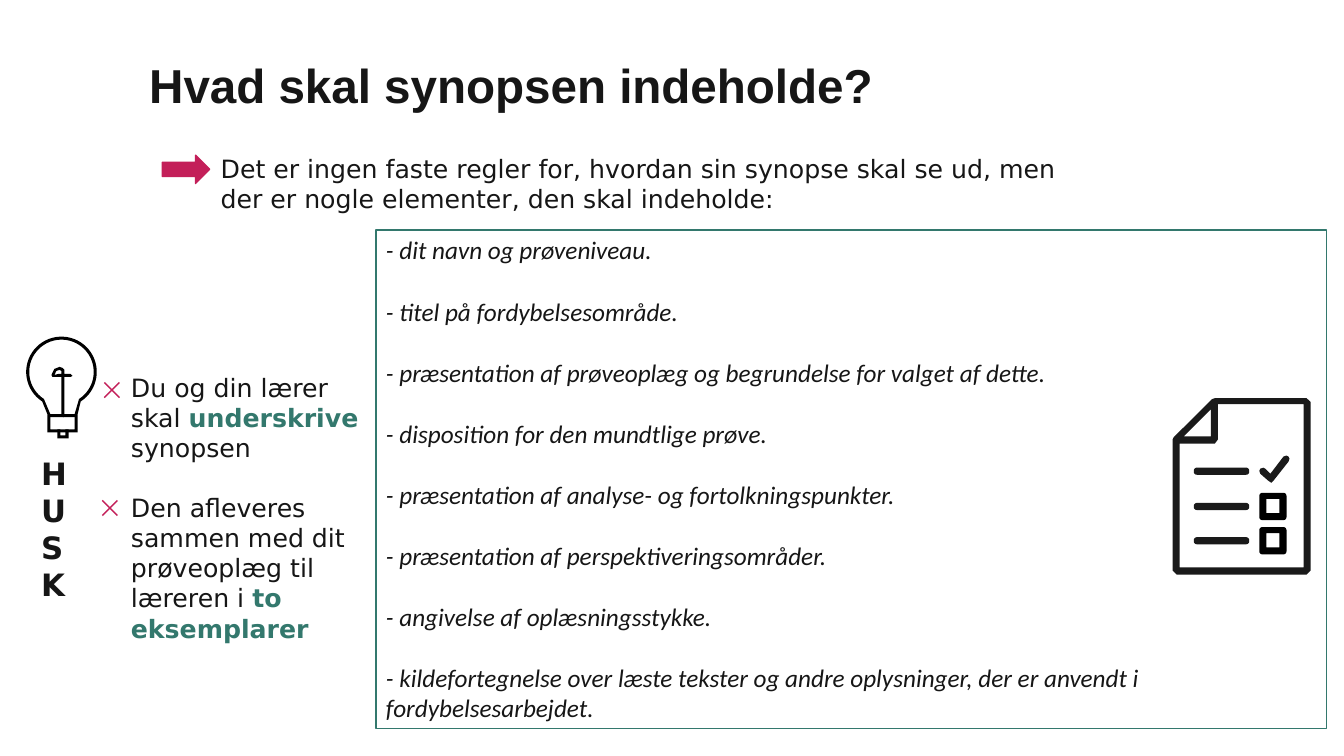
from dataclasses import dataclass
from math import cos, radians, sin

from pptx import Presentation
from pptx.dml.color import RGBColor
from pptx.enum.shapes import MSO_SHAPE
from pptx.enum.text import MSO_ANCHOR, PP_ALIGN
from pptx.util import Inches, Pt

COLORS = {"ink": "161616", "green": "33786D", "pink": "C31F59",
          "page": "1A1A1A", "black": "000000"}
BODY_FONT = "DejaVu Sans"

Point = tuple[float, float]
Outline = list[Point]


@dataclass
class Run:
    text: str
    color: str = "ink"
    bold: bool = False


@dataclass
class Part:
    """One filled piece of an icon; later outlines cut holes in the first."""
    outlines: list[Outline]
    color: str = "black"


def rgb(name: str) -> RGBColor:
    return RGBColor.from_string(COLORS[name])


def place(sp, left: float, top: float, width: float, height: float) -> None:
    sp.left, sp.top = Inches(left), Inches(top)
    sp.width, sp.height = Inches(width), Inches(height)


def write(sp, paragraphs: list[list[Run]], *, font: str = BODY_FONT, size: float = 18,
          italic: bool = False, gap: float = 0, line_spacing: float | None = None,
          wrap: bool = True) -> None:
    """Fill a shape with left-aligned paragraphs, gap points apart."""
    tf = sp.text_frame
    tf.word_wrap = wrap
    tf.vertical_anchor = MSO_ANCHOR.TOP
    for i, runs in enumerate(paragraphs):
        p = tf.paragraphs[0] if i == 0 else tf.add_paragraph()
        p.alignment = PP_ALIGN.LEFT
        p.space_before = Pt(gap if i else 0)
        if line_spacing:
            p.line_spacing = line_spacing
        for run in runs:
            r = p.add_run()
            r.text = run.text
            r.font.name, r.font.size = font, Pt(size)
            r.font.bold, r.font.italic = run.bold, italic
            r.font.color.rgb = rgb(run.color)


def add_part(shapes, part: Part):
    first, *holes = [[(Inches(x), Inches(y)) for x, y in o] for o in part.outlines]
    builder = shapes.build_freeform(*first[0])
    builder.add_line_segments(first[1:], close=True)
    for hole in holes:
        builder.move_to(*hole[0])
        builder.add_line_segments(hole[1:], close=True)
    sp = builder.convert_to_shape()
    sp.shadow.inherit = False
    sp.fill.solid()
    sp.fill.fore_color.rgb = rgb(part.color)
    sp.line.fill.background()
    return sp


def add_icon(shapes, parts: list[Part]) -> None:
    shapes.add_group_shape([add_part(shapes, part) for part in parts])


def arc(cx: float, cy: float, radius: float, start: int, end: int, step: int) -> Outline:
    return [(cx + radius * cos(radians(a)), cy + radius * sin(radians(a)))
            for a in range(start, end + step, step)]


def rounded(left: float, top: float, width: float, height: float, radius: float) -> Outline:
    x1, x2 = left + radius, left + width - radius
    y1, y2 = top + radius, top + height - radius
    corners = [(x2, y2), (x1, y2), (x1, y1), (x2, y1)]
    return [pt for i, (x, y) in enumerate(corners)
            for pt in arc(x, y, radius, 90 * i, 90 * i + 90, 15)]


def bulb_outline(radius: float, neck: float, bottom: float) -> Outline:
    """Round glass narrowing to a neck of the given half width."""
    glass = arc(0.61, 3.69, radius, 123, 417, 6)
    right, left = 0.62 + neck, 0.62 - neck
    return glass + [(right, 4.11), (right, bottom), (left, bottom), (left, 4.11)]


def cross_outline(left: float, top: float, width: float, height: float) -> Outline:
    cx, cy, d = left + width / 2, top + height / 2, 0.01
    right, bottom = left + width, top + height
    return [(cx, cy - d), (right - d, top), (right, top + d), (cx + d, cy),
            (right, bottom - d), (right - d, bottom), (cx, cy + d), (left + d, bottom),
            (left, bottom - d), (cx - d, cy), (left, top + d), (left + d, top)]


def checklist_parts() -> list[Part]:
    page = [(11.67, 5.7), (12.96, 5.7), (13, 5.66), (13, 3.99), (12.96, 3.95),
            (12.05, 3.95), (12.02, 3.96), (11.64, 4.34), (11.63, 4.36), (11.63, 5.66)]
    fold = [(12.01, 4.06), (12.01, 4.33), (11.74, 4.33)]
    inside = [(11.7, 4.4), (12.05, 4.4), (12.08, 4.36), (12.08, 4.01),
              (12.93, 4.01), (12.93, 5.63), (11.7, 5.63)]
    tick = [(12.58, 4.77), (12.61, 4.79), (12.63, 4.77), (12.78, 4.58), (12.79, 4.55),
            (12.78, 4.53), (12.76, 4.52), (12.73, 4.53), (12.6, 4.7), (12.55, 4.65),
            (12.53, 4.64), (12.5, 4.65), (12.49, 4.67), (12.5, 4.7)]
    bars = [Part([rounded(11.84, top, 0.55, 0.07, 0.03)], "page")
            for top in (4.64, 4.99, 5.33)]
    boxes = [Part([rounded(12.49, top, 0.27, 0.27, 0.03),
                   rounded(12.56, top + 0.06, 0.13, 0.14, 0)])
             for top in (4.89, 5.23)]
    return [Part([page, fold, inside], "page"), Part([tick], "page"), *bars, *boxes]


def bulb_parts() -> list[Part]:
    filament = [(0.61, 4.13), (0.63, 4.14), (0.64, 4.12), (0.64, 3.74), (0.7, 3.74),
                (0.72, 3.73), (0.7, 3.71), (0.64, 3.71), (0.64, 3.67), (0.62, 3.65),
                (0.59, 3.64), (0.54, 3.66), (0.51, 3.72), (0.52, 3.74), (0.61, 3.74)]
    loop = [(0.54, 3.72), (0.56, 3.68), (0.59, 3.67), (0.61, 3.68), (0.61, 3.71),
            (0.58, 3.71)]
    foot = [(0.57, 4.26), (0.6, 4.26), (0.6, 4.32), (0.65, 4.32), (0.65, 4.26),
            (0.68, 4.26), (0.68, 4.35), (0.57, 4.35)]
    return [Part([bulb_outline(0.35, 0.15, 4.29), bulb_outline(0.32, 0.12, 4.26)]),
            Part([rounded(0.49, 4.11, 0.27, 0.03, 0.01)]),
            Part([filament, loop]), Part([foot])]


def add_text(shapes, box: tuple[float, float, float, float],
             paragraphs: list[list[Run]], **kwargs):
    sp = shapes.add_textbox(*map(Inches, box))
    write(sp, paragraphs, **kwargs)
    return sp


REQUIREMENTS = [
    "- dit navn og prøveniveau.",
    "- titel på fordybelsesområde.",
    "- præsentation af prøveoplæg og begrundelse for valget af dette.",
    "- disposition for den mundtlige prøve.",
    "- præsentation af analyse- og fortolkningspunkter.",
    "- præsentation af perspektiveringsområder.",
    "- angivelse af oplæsningsstykke.",
    "- kildefortegnelse over læste tekster og andre oplysninger, der er anvendt i "
    "fordybelsesarbejdet.",
]
REMINDERS = [
    [Run("Du og din lærer skal "), Run("underskrive", "green", True), Run(" synopsen")],
    [Run("Den afleveres sammen med dit prøveoplæg til læreren i "),
     Run("to eksemplarer", "green", True)],
]


def main() -> None:
    prs = Presentation()
    prs.slide_width, prs.slide_height = Inches(13.33), Inches(7.5)
    slide = prs.slides.add_slide(prs.slide_layouts[5])
    shapes = slide.shapes

    title = shapes.title
    place(title, 1.48, 0.65, 10.54, 0.37)
    tf = title.text_frame
    tf.margin_left = tf.margin_top = tf.margin_right = tf.margin_bottom = 0
    write(title, [[Run("Hvad skal synopsen indeholde?", bold=True)]],
          font="Arial", size=34, line_spacing=0.83)

    add_text(shapes, (2.09, 1.47, 8.5, 0.71),
             [[Run("Det er ingen faste regler for, hvordan sin synopse skal se ud, men "
                   "der er nogle elementer, den skal indeholde:")]])

    frame = shapes.add_shape(MSO_SHAPE.RECTANGLE, *map(Inches, (3.73, 2.28, 9.43, 4.95)))
    frame.shadow.inherit = False
    frame.fill.background()
    frame.line.color.rgb, frame.line.width = rgb("green"), Pt(1)
    write(frame, [[Run(item)] for item in REQUIREMENTS], font="Calibri", italic=True, gap=22)
    add_icon(shapes, checklist_parts())

    arrow = shapes.add_shape(MSO_SHAPE.RIGHT_ARROW, *map(Inches, (1.61, 1.54, 0.47, 0.28)))
    arrow.shadow.inherit = False
    arrow.fill.solid()
    arrow.fill.fore_color.rgb = arrow.line.color.rgb = rgb("pink")
    arrow.line.width = Pt(1)

    husk = add_text(shapes, (0.31, 4.46, 0.64, 1.85), [[Run("HUSK", bold=True)]],
                    size=22, wrap=False)
    husk.text_frame._txBody.bodyPr.set("vert", "wordArtVert")
    add_text(shapes, (1.2, 3.64, 2.68, 2.83), REMINDERS, gap=21)
    add_icon(shapes, bulb_parts())
    for left, top in ((1.03, 3.79), (1.01, 4.96)):
        add_part(shapes, Part([cross_outline(left, top, 0.16, 0.16)], "pink"))

    prs.save("out.pptx")


if __name__ == "__main__":
    main()
